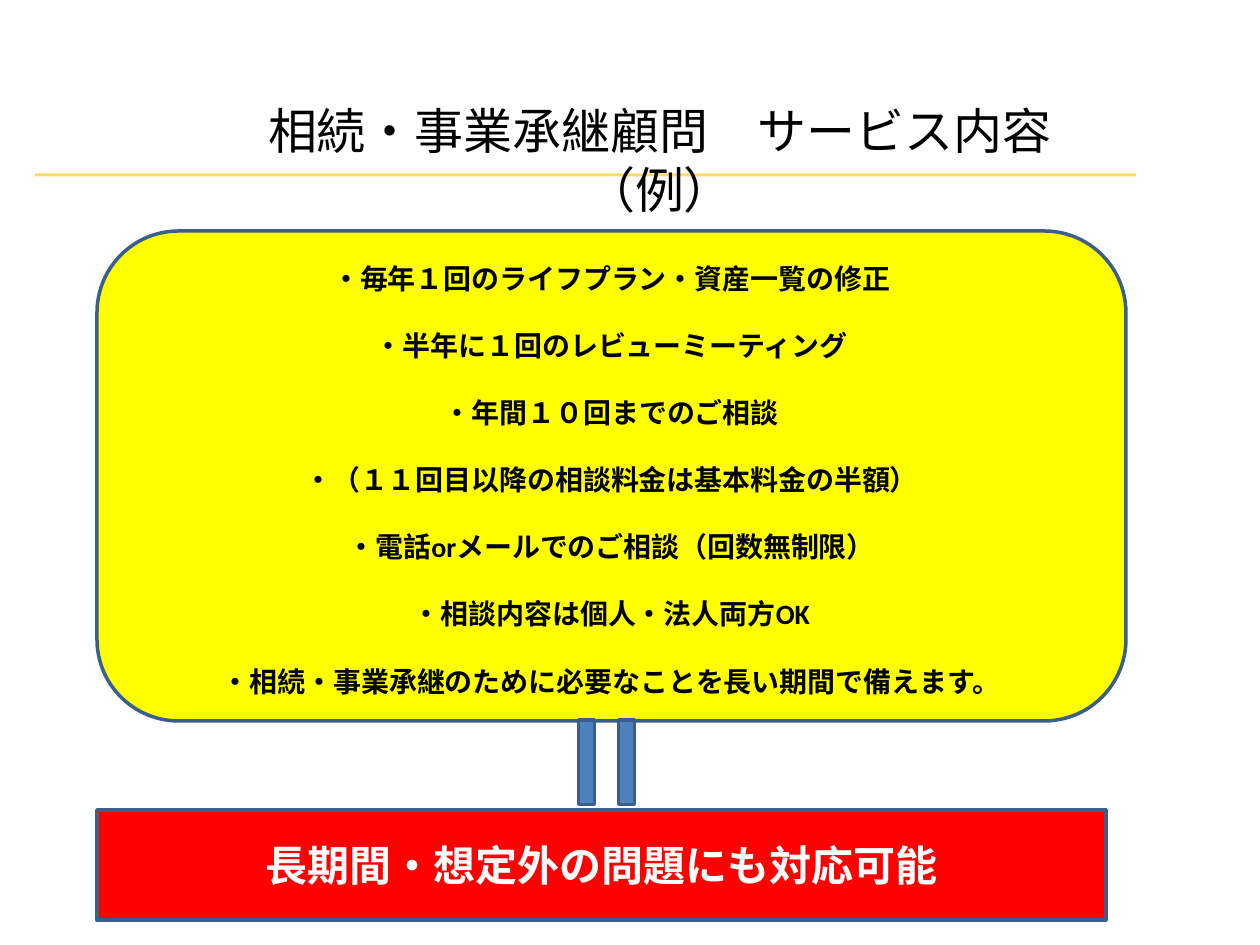
from lxml import etree
from pptx import Presentation
from pptx import util as u
from pptx.dml.color import RGBColor
from pptx.enum import shapes, text
from pptx.oxml import ns

BLACK = RGBColor(0, 0, 0)
WHITE = RGBColor(255, 255, 255)
YELLOW = RGBColor(255, 255, 0)
RED = RGBColor(255, 0, 0)
BLUE = RGBColor(0x4F, 0x81, 0xBD)
NAVY = RGBColor(0x3A, 0x5F, 0x8C)
GOLD = RGBColor(0xFF, 0xC0, 0)
SCALE = 914400 / 126


def px(*nums):
    return [u.Emu(round(n * SCALE)) for n in nums]


def write(shape, lines, size, color=BLACK, bold=False, gap=0,
          anchor=text.MSO_ANCHOR.TOP):
    frame = shape.text_frame
    frame.word_wrap = True
    frame.auto_size = text.MSO_AUTO_SIZE.NONE
    frame.vertical_anchor = anchor
    frame.text = "\n".join(lines)
    for i, para in enumerate(frame.paragraphs):
        para.alignment = text.PP_ALIGN.CENTER
        para.space_before = u.Pt(gap if i else 0)
        font = para.runs[0].font
        font.name = "Calibri"
        font.size = u.Pt(size)
        font.bold = bold
        font.color.rgb = color


deck = Presentation()
deck.slide_width, deck.slide_height = px(1260, 945)
slide = deck.slides.add_slide(deck.slide_layouts[5])

rule = slide.shapes.add_connector(
    shapes.MSO_CONNECTOR.STRAIGHT, *px(35, 175, 1136, 175))
rule.line.color.rgb = GOLD
rule.line.width = u.Pt(1.75)
props = rule.element.spPr
etree.SubElement(props, ns.qn("a:effectLst"))
tint = props.find(".//" + ns.qn("a:srgbClr"))
etree.SubElement(tint, ns.qn("a:alpha"), val="57000")

kind = shapes.MSO_SHAPE
boxes = []
for form, area, fill in (
    (kind.ROUNDED_RECTANGLE, (97, 231, 1029, 490), YELLOW),
    (kind.RECTANGLE, (97, 810, 1009, 110), RED),
    (kind.MATH_EQUAL, (549, 719, 115, 87), BLUE),
):
    box = slide.shapes.add_shape(form, *px(*area))
    box.shadow.inherit = False
    box.fill.solid()
    box.fill.fore_color.rgb = fill
    box.line.color.rgb = NAVY
    box.line.width = u.Pt(2)
    boxes.append(box)

plan, claim, equal = boxes
equal.rotation = 90
equal.adjustments[0] = 0.18
equal.adjustments[1] = 0.28

write(plan, [
    "・毎年１回のライフプラン・資産一覧の修正",
    "・半年に１回のレビューミーティング",
    "・年間１０回までのご相談",
    "・（１１回目以降の相談料金は基本料金の半額）",
    "・電話orメールでのご相談（回数無制限）",
    "・相談内容は個人・法人両方OK",
    "・相続・事業承継のために必要なことを長い期間で備えます。",
], 16, bold=True, gap=19.2)
write(claim, ["長期間・想定外の問題にも対応可能"], 24, color=WHITE, bold=True,
      anchor=text.MSO_ANCHOR.MIDDLE)

title = slide.shapes.title
title.left, title.top, title.width, title.height = px(229, 94, 861, 72)
write(title, ["相続・事業承継顧問　サービス内容（例）"], 28)
slide.shapes._spTree.append(title.element)

deck.save("out.pptx")
